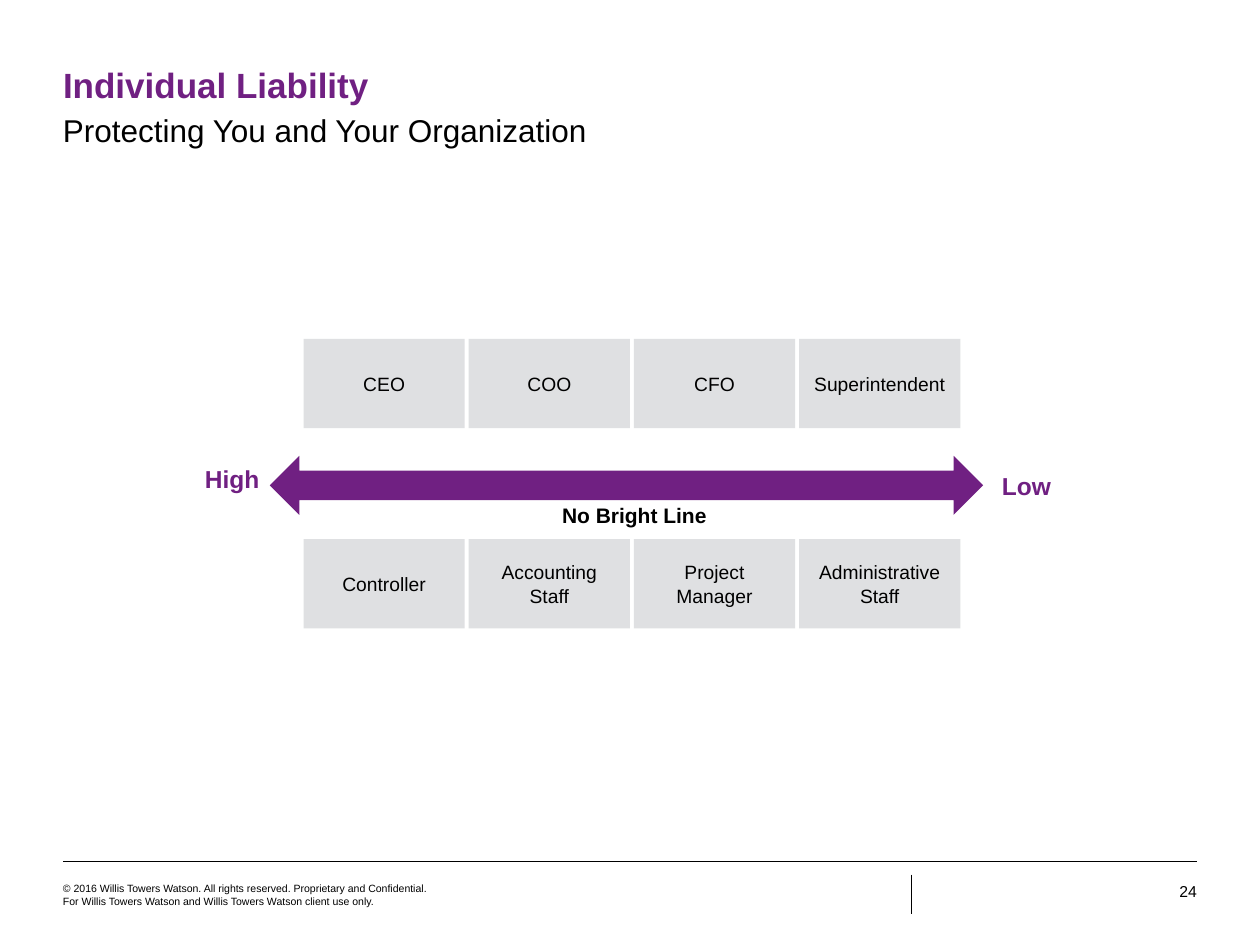
from dataclasses import dataclass

from lxml import etree
from pptx import Presentation
from pptx.dml.color import RGBColor
from pptx.enum.shapes import MSO_CONNECTOR, MSO_SHAPE
from pptx.enum.text import MSO_ANCHOR, PP_ALIGN
from pptx.oxml.ns import qn
from pptx.util import Cm, Pt

LEFT, MID, RIGHT = PP_ALIGN.LEFT, PP_ALIGN.CENTER, PP_ALIGN.RIGHT
TOP, CENTER = MSO_ANCHOR.TOP, MSO_ANCHOR.MIDDLE
RECT, ARROW = MSO_SHAPE.RECTANGLE, MSO_SHAPE.LEFT_RIGHT_ARROW
STRAIGHT = MSO_CONNECTOR.STRAIGHT

FONT = "Arial"
COLORS = {"purple": "702082", "gray": "DFE0E2", "black": "000000"}

# Role grid, in centimetres
GRID_LEFT, STEP = 6.12, 3.33
ROLE_WIDTH, ROLE_HEIGHT, ROLE_PAD = 3.25, 1.8, 0.25
ROLES = {
    6.83: ("CEO", "COO", "CFO", "Superintendent"),
    10.87: ("Controller", "Accounting Staff", "Project Manager",
            "Administrative Staff"),
}


@dataclass
class Box:
    left: float
    top: float
    width: float
    height: float

    def lengths(self) -> list:
        return [Cm(n) for n in (self.left, self.top, self.width, self.height)]


@dataclass
class Label:
    text: str
    box: Box
    size: float
    color: str = "black"
    bold: bool = False
    align: PP_ALIGN = LEFT


@dataclass
class Rule:
    start: tuple
    end: tuple
    weight: float


TITLE = Label("Individual Liability", Box(1.27, 1.27, 22.86, 0.86), 20,
              "purple", True)
LABELS = (
    Label("Protecting You and Your Organization",
          Box(1.27, 2.23, 22.86, 0.76), 18),
    Label("High", Box(1.78, 9.35, 3.45, 1.45), 14, "purple", True, RIGHT),
    Label("Low", Box(20.2, 9.5, 3.96, 1.45), 14, "purple", True),
    Label("No Bright Line", Box(11.23, 10.14, 3.12, 0.74), 12, "black", True,
          MID),
    Label("© 2016 Willis Towers Watson. All rights reserved. Proprietary and "
          "Confidential. For Willis Towers Watson and Willis Towers Watson "
          "client use only.", Box(1.27, 17.78, 7.52, 0.69), 6),
    Label("24", Box(23.06, 17.78, 1.07, 0.38), 9, align=RIGHT),
)
RULES = (
    Rule((1.27, 17.36), (24.13, 17.36), 0.25),
    Rule((18.38, 17.63), (18.38, 18.43), 0.75),
)


def rgb(name: str) -> RGBColor:
    return RGBColor.from_string(COLORS[name])


def write(shape, label: Label, anchor: MSO_ANCHOR = TOP, pad: float = 0) -> None:
    frame = shape.text_frame
    frame.text = label.text
    frame.word_wrap = True
    frame.vertical_anchor = anchor
    frame.margin_left = frame.margin_right = Cm(pad)
    frame.margin_top = frame.margin_bottom = Cm(pad)
    para = frame.paragraphs[0]
    para.alignment = label.align
    font = para.runs[0].font
    font.name, font.size, font.bold = FONT, Pt(label.size), label.bold
    font.color.rgb = rgb(label.color)


def add_title(slide, label: Label) -> None:
    title = slide.shapes.title
    title.left, title.top, title.width, title.height = label.box.lengths()
    write(title, label)


def add_label(slide, label: Label) -> None:
    write(slide.shapes.add_textbox(*label.box.lengths()), label)


def add_solid(slide, kind: MSO_SHAPE, box: Box, color: str):
    """Add a flat preset shape without outline and return it."""
    shape = slide.shapes.add_shape(kind, *box.lengths())
    shape.shadow.inherit = False
    shape.fill.solid()
    shape.fill.fore_color.rgb = rgb(color)
    shape.line.fill.background()
    return shape


def add_role(slide, label: Label) -> None:
    shape = add_solid(slide, RECT, label.box, "gray")
    write(shape, label, CENTER, ROLE_PAD)


def add_rule(slide, rule: Rule) -> None:
    ends = [Cm(n) for n in rule.start + rule.end]
    line = slide.shapes.add_connector(STRAIGHT, *ends)
    line.line.color.rgb = rgb("black")
    line.line.width = Pt(rule.weight)
    etree.SubElement(line._element.spPr, qn("a:effectLst"))


def main() -> None:
    deck = Presentation()
    deck.slide_width, deck.slide_height = Cm(25.4), Cm(19.05)
    slide = deck.slides.add_slide(deck.slide_layouts[5])

    add_title(slide, TITLE)
    for rule in RULES:
        add_rule(slide, rule)
    add_solid(slide, ARROW, Box(5.44, 9.19, 14.38, 1.19), "purple")
    for label in LABELS:
        add_label(slide, label)
    for top, names in ROLES.items():
        for col, name in enumerate(names):
            box = Box(GRID_LEFT + col * STEP, top, ROLE_WIDTH, ROLE_HEIGHT)
            add_role(slide, Label(name, box, 11, align=MID))

    deck.save("out.pptx")


if __name__ == "__main__":
    main()
